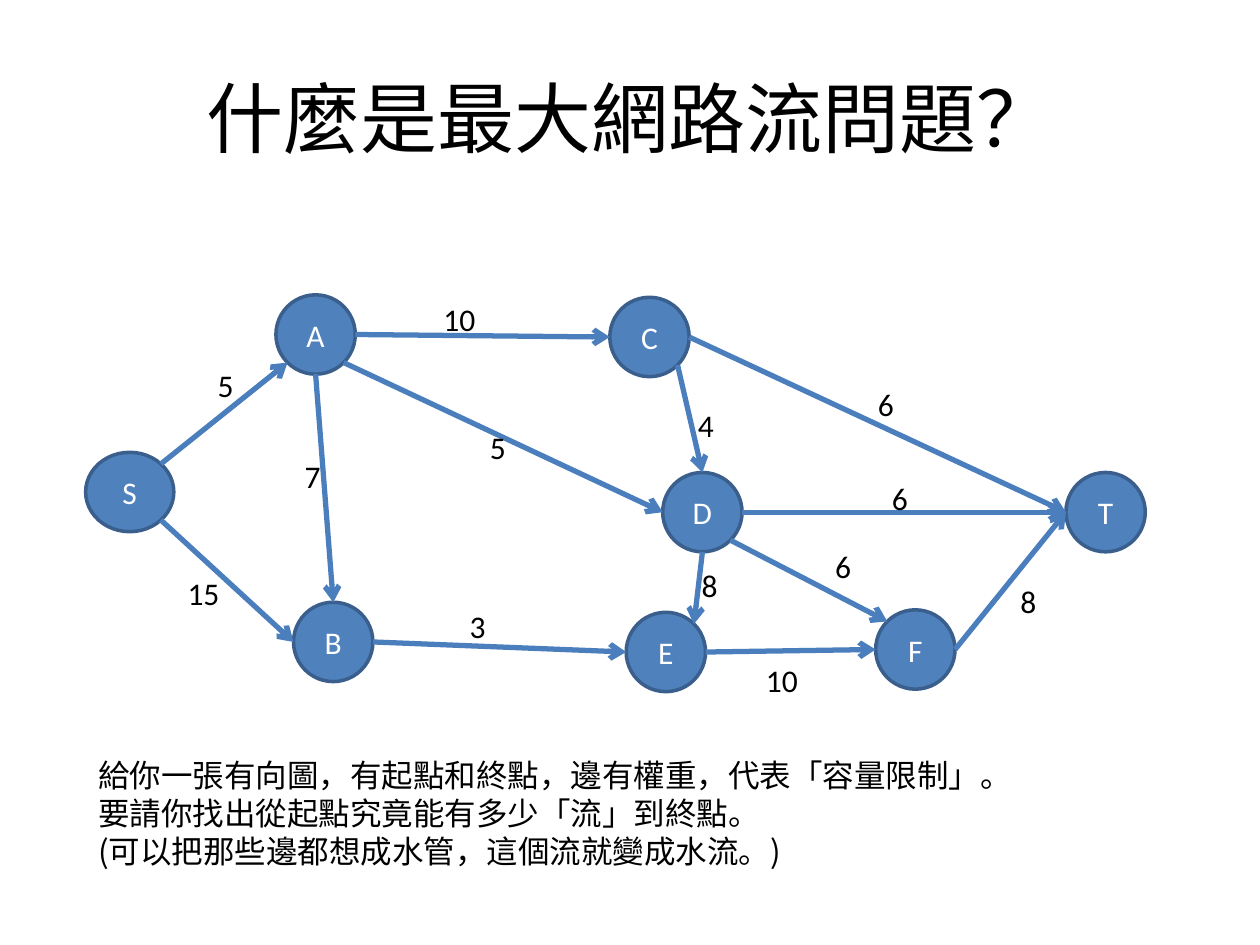
from math import cos, radians, sin

from lxml import etree
from pptx import Presentation
from pptx.dml.color import RGBColor
from pptx.enum.shapes import MSO_CONNECTOR, MSO_SHAPE
from pptx.enum.text import MSO_ANCHOR, MSO_AUTO_SIZE, PP_ALIGN
from pptx.oxml.ns import qn
from pptx.util import Inches, Pt

STRAIGHT = MSO_CONNECTOR.STRAIGHT
OVAL = MSO_SHAPE.OVAL
MIDDLE = MSO_ANCHOR.MIDDLE
FIT = MSO_AUTO_SIZE.SHAPE_TO_FIT_TEXT
LEFT, CENTER = PP_ALIGN.LEFT, PP_ALIGN.CENTER

BLACK = RGBColor(0x00, 0x00, 0x00)
WHITE = RGBColor(0xFF, 0xFF, 0xFF)
NODE_FILL = RGBColor(0x4F, 0x81, 0xBD)
NODE_LINE = RGBColor(0x3A, 0x5F, 0x8C)
EDGE = RGBColor(0x4B, 0x7E, 0xBC)
LATIN, CJK = "Calibri", "Noto Sans CJK SC"

# Node: left, top, width
NODE_HEIGHT = 0.63
NODES = {
    "A": (2.19, 2.34, 0.63),
    "C": (4.84, 2.36, 0.63),
    "B": (2.33, 4.78, 0.63),
    "E": (4.97, 4.86, 0.63),
    "F": (6.95, 4.84, 0.63),
    "D": (5.26, 3.75, 0.63),
    "S": (0.68, 3.59, 0.70),
    "T": (8.46, 3.75, 0.63),
}

# Points on a node's rim, as clockwise angles from the right
E, SE, S, SW, W, NW, N, NE = range(0, 360, 45)

# Start node and side, end node and side, capacity, label left, top, width
EDGES = [
    ("A", S, "B", N, "7", 2.32, 3.58, 0.34),
    ("A", E, "C", W, "10", 3.42, 2.33, 0.48),
    ("B", E, "E", W, "3", 3.63, 4.77, 0.34),
    ("C", SE, "D", N, "4", 5.44, 3.17, 0.34),
    ("D", S, "E", NE, "8", 5.47, 4.44, 0.34),
    ("D", SE, "F", NW, "6", 6.53, 4.29, 0.34),
    ("A", SE, "D", W, "5", 3.79, 3.35, 0.34),
    ("S", NE, "A", SW, "5", 1.63, 2.86, 0.34),
    ("S", SE, "B", W, "15", 1.39, 4.51, 0.46),
    ("E", E, "F", W, "10", 5.98, 5.20, 0.46),
    ("C", E, "T", W, "6", 6.87, 3.01, 0.33),
    ("D", E, "T", W, "6", 6.98, 3.75, 0.34),
    ("F", E, "T", W, "8", 8.00, 4.57, 0.33),
]

CAPTION = [
    "給你一張有向圖，有起點和終點，邊有權重，代表「容量限制」。",
    "要請你找出從起點究竟能有多少「流」到終點。",
    "(可以把那些邊都想成水管，這個流就變成水流。)",
]


def write(tf, *lines, font=LATIN, size=18, color=BLACK, align=LEFT):
    for i, line in enumerate(lines):
        p = tf.add_paragraph() if i else tf.paragraphs[0]
        p.alignment = align
        r = p.add_run()
        r.text = line
        r.font.name = font
        r.font.size = Pt(size)
        r.font.color.rgb = color
        ea = etree.SubElement(r.font._element, qn("a:ea"))
        ea.set("typeface", font)


def rim_point(name, angle):
    left, top, width = NODES[name]
    x = left + width / 2 * (1 + cos(radians(angle)))
    y = top + NODE_HEIGHT / 2 * (1 + sin(radians(angle)))
    return Inches(x), Inches(y)


prs = Presentation()
prs.slide_width, prs.slide_height = Inches(10), Inches(7.5)
s = prs.slides.add_slide(prs.slide_layouts[5])

title = s.shapes.title
title.left, title.top = Inches(0.5), Inches(0.3)
title.width, title.height = Inches(9), Inches(1.25)
title.text_frame.vertical_anchor = MIDDLE
write(title.text_frame, "什麼是最大網路流問題？", font=CJK, size=44, align=CENTER)

for name, (left, top, width) in NODES.items():
    sp = s.shapes.add_shape(OVAL, Inches(left), Inches(top), Inches(width), Inches(NODE_HEIGHT))
    sp.shadow.inherit = False
    sp.fill.solid()
    sp.fill.fore_color.rgb = NODE_FILL
    sp.line.color.rgb = NODE_LINE
    sp.line.width = Pt(2)
    sp.text_frame.vertical_anchor = MIDDLE
    write(sp.text_frame, name, color=WHITE, align=CENTER)

for start, start_side, end, end_side, *_ in EDGES:
    line = s.shapes.add_connector(
        STRAIGHT, *rim_point(start, start_side), *rim_point(end, end_side))
    line.line.color.rgb = EDGE
    line.line.width = Pt(3)
    etree.SubElement(line.line._get_or_add_ln(), qn("a:tailEnd")).set("type", "arrow")
    etree.SubElement(line._element.spPr, qn("a:effectLst"))

labels = [([capacity], LATIN, left, top, width, 0.4)
          for *_, capacity, left, top, width in EDGES]
labels.append((CAPTION, CJK, 0.68, 5.95, 7.52, 1.01))
for lines, font, *box in labels:
    tf = s.shapes.add_textbox(*map(Inches, box)).text_frame
    tf.word_wrap = False
    tf.auto_size = FIT
    write(tf, *lines, font=font)

prs.save("out.pptx")
